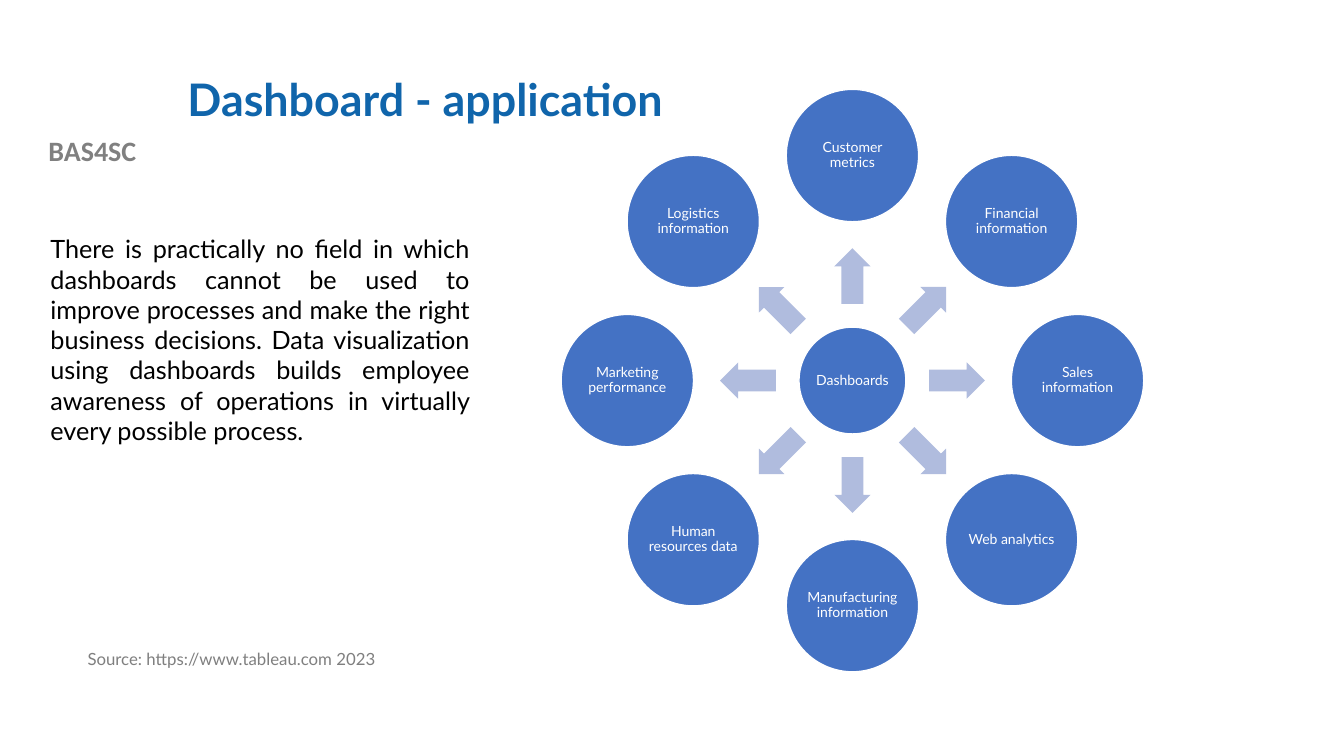
import math

import lxml.etree
import pptx
import pptx.dml.color
import pptx.enum.shapes
import pptx.enum.text
import pptx.oxml.ns
import pptx.util

COLORS = {
    "title": "1065AB",
    "label": "808080",
    "source": "7F7F7F",
    "body": "000000",
    "circle": "4472C4",
    "arrow": "B0BCDE",
    "white": "FFFFFF",
}
ALIGN = pptx.enum.text.PP_ALIGN
ANCHOR = pptx.enum.text.MSO_ANCHOR
SHAPE = pptx.enum.shapes.MSO_SHAPE

COLUMNS = 40
HUB_COLUMN, HUB_ROW = 25.37, 11.33
HUB_SIZE, TOPIC_SIZE = 3.18, 3.94
TOPIC_RADIUS, ARROW_RADIUS = 6.7, 3.11
ARROW_LENGTH, ARROW_WIDTH = 1.66, 1.08

TOPICS = [
    "Customer metrics",
    "Financial information",
    "Sales information",
    "Web analytics",
    "Manufacturing information",
    "Human resources data",
    "Marketing performance",
    "Logistics information",
]


def rgb(name):
    return pptx.dml.color.RGBColor.from_string(COLORS[name])


class DashboardSlide:
    font = "Lato"

    def __init__(self, presentation):
        self.cell = presentation.slide_width / COLUMNS
        self.slide = presentation.slides.add_slide(presentation.slide_layouts[1])

    def grid(self, *lengths):
        return [round(length * self.cell) for length in lengths]

    def set_text(self, shape, text, size, color, align=ALIGN.LEFT, anchor=ANCHOR.TOP,
                 spacing=1.0, bold=False, font=None):
        frame = shape.text_frame
        frame.text = text
        frame.word_wrap = True
        frame.auto_size = pptx.enum.text.MSO_AUTO_SIZE.NONE
        frame.vertical_anchor = anchor
        paragraph = frame.paragraphs[0]
        paragraph.alignment = align
        paragraph.line_spacing = spacing
        paragraph.space_before = pptx.util.Pt(0)
        for run in paragraph.runs:
            run.font.name = font or self.font
            run.font.size = pptx.util.Pt(size)
            run.font.bold = bold
            run.font.color.rgb = rgb(color)

    def placeholder(self, index, box, text, size, color, **style):
        shape = self.slide.placeholders[index]
        shape.left, shape.top, shape.width, shape.height = self.grid(*box)
        self.set_text(shape, text, size, color, **style)
        return shape

    def title(self, box, text):
        self.placeholder(0, box, text, 32, "title", anchor=ANCHOR.MIDDLE,
                         spacing=0.9, bold=True)

    def body(self, box, text):
        shape = self.placeholder(1, box, text, 18, "body", align=ALIGN.JUSTIFY)
        properties = shape.text_frame.paragraphs[0]._p.get_or_add_pPr()
        properties.set("marL", "0")
        properties.set("indent", "0")
        lxml.etree.SubElement(properties, pptx.oxml.ns.qn("a:buNone"))

    def text_box(self, box, text, size, color, **style):
        shape = self.slide.shapes.add_textbox(*self.grid(*box))
        self.set_text(shape, text, size, color, **style)

    def centered_shape(self, kind, column, row, width, height, color):
        box = self.grid(column - width / 2, row - height / 2, width, height)
        shape = self.slide.shapes.add_shape(kind, *box)
        shape.shadow.inherit = False
        shape.fill.solid()
        shape.fill.fore_color.rgb = rgb(color)
        return shape

    def circle(self, column, row, size, text):
        shape = self.centered_shape(SHAPE.OVAL, column, row, size, size, "circle")
        shape.line.color.rgb = rgb("white")
        shape.line.width = pptx.util.Pt(1)
        frame = shape.text_frame
        frame.margin_left = frame.margin_right = 0
        frame.margin_top = frame.margin_bottom = 0
        self.set_text(shape, text, 10, "white", align=ALIGN.CENTER,
                      anchor=ANCHOR.MIDDLE, spacing=0.9)

    def arrow(self, column, row, rotation):
        shape = self.centered_shape(SHAPE.RIGHT_ARROW, column, row,
                                    ARROW_LENGTH, ARROW_WIDTH, "arrow")
        shape.line.fill.background()
        shape.adjustments[0] = 0.6
        shape.adjustments[1] = 0.5
        shape.rotation = rotation

    def radial_diagram(self, hub, topics):
        self.circle(HUB_COLUMN, HUB_ROW, HUB_SIZE, hub)
        for index, topic in enumerate(topics):
            degrees = (270 + index * 360 / len(topics)) % 360
            across = math.cos(math.radians(degrees))
            down = math.sin(math.radians(degrees))
            self.arrow(HUB_COLUMN + ARROW_RADIUS * across,
                       HUB_ROW + ARROW_RADIUS * down, degrees)
            self.circle(HUB_COLUMN + TOPIC_RADIUS * across,
                        HUB_ROW + TOPIC_RADIUS * down, TOPIC_SIZE, topic)


def main():
    presentation = pptx.Presentation()
    presentation.slide_width = pptx.util.Inches(13.33)
    presentation.slide_height = pptx.util.Inches(7.5)
    dashboard = DashboardSlide(presentation)
    dashboard.text_box((0, 3.84, 5.5, 1.32), "BAS4SC", 20, "label",
                       align=ALIGN.CENTER, bold=True, font="Calibri")
    dashboard.title((5.28, 1.2, 32, 3.66), "Dashboard - application")
    dashboard.text_box((2.31, 19.23, 15, 1.56), "Source: https://www.tableau.com 2023",
                       12, "source", spacing=0.9)
    dashboard.radial_diagram("Dashboards", TOPICS)
    dashboard.body(
        (1.2, 6.81, 13.08, 6.66),
        "There is practically no field in which dashboards cannot be used to improve "
        "processes and make the right business decisions. Data visualization using "
        "dashboards builds employee awareness of operations in virtually every "
        "possible process.",
    )
    presentation.save("out.pptx")


if __name__ == "__main__":
    main()
